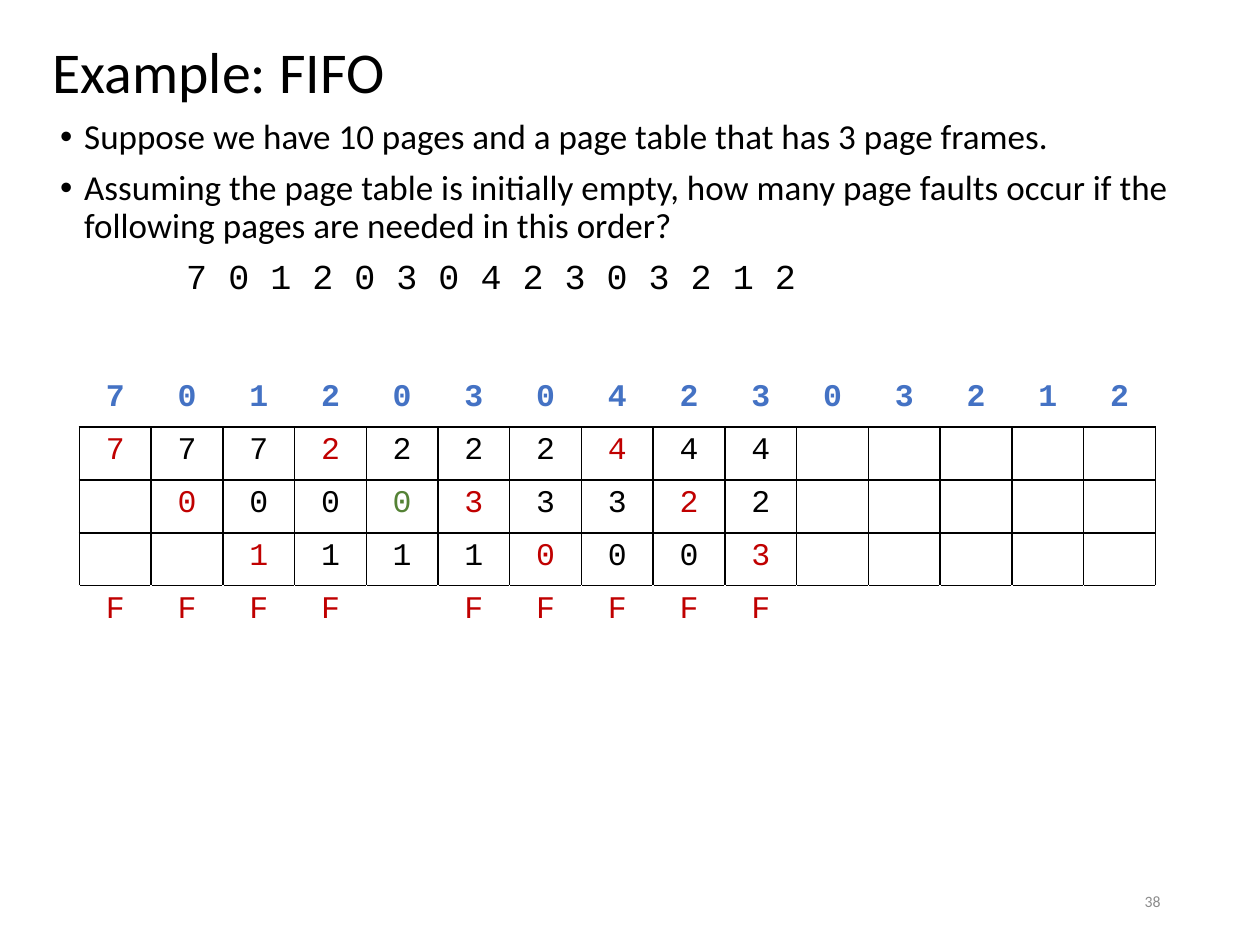
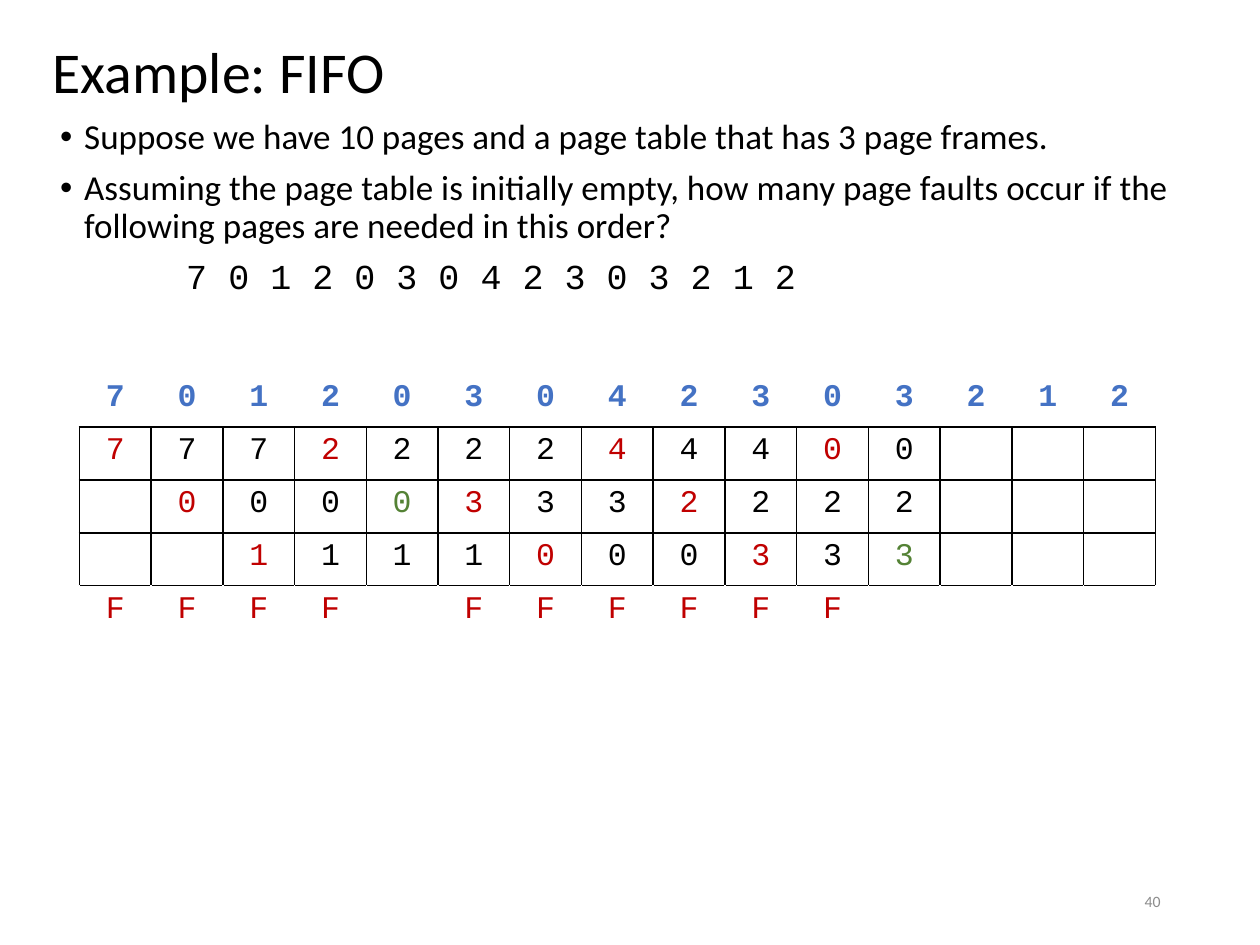
from lxml import etree
from pptx import Presentation
from pptx import util as u
from pptx.dml.color import RGBColor
from pptx.enum import text as t
from pptx.oxml import ns

BLACK = RGBColor(0x00, 0x00, 0x00)
GRAY = RGBColor(0x8C, 0x8C, 0x8C)
BLUE = RGBColor(0x44, 0x72, 0xC4)
RED = RGBColor(0xC0, 0x00, 0x00)
GREEN = RGBColor(0x54, 0x82, 0x35)
BODY_FONT = "Calibri"
CODE_FONT = "Courier New"

PAGES = "7 0 1 2 0 3 0 4 2 3 0 3 2 1 2"
REQUESTS = PAGES.split()
FRAME_COUNT = 3
LAST_ROW = FRAME_COUNT + 1
BULLETS = [
    "Suppose we have 10 pages and a page table that has 3 page frames.",
    "Assuming the page table is initially empty, how many page faults occur "
    "if the following pages are needed in this order?",
]
# Slide number and how many requests have been served so far
STEPS = [(38, 10), (40, 12)]


def add_text(slide, box, lines, size, color, anchor=t.MSO_ANCHOR.MIDDLE):
    text_box = slide.shapes.add_textbox(*[u.Inches(value) for value in box])
    frame = text_box.text_frame
    frame.word_wrap = True
    frame.vertical_anchor = anchor
    frame.text = "\n".join(lines)
    for paragraph in frame.paragraphs:
        paragraph.line_spacing = 0.9
        font = paragraph.runs[0].font
        font.name, font.size, font.color.rgb = BODY_FONT, u.Pt(size), color
    return frame.paragraphs


def write_cell(cell, value, color, bold=False):
    cell.text_frame.text = value
    paragraph = cell.text_frame.paragraphs[0]
    paragraph.alignment = t.PP_ALIGN.CENTER
    font = paragraph.runs[0].font
    font.name, font.size, font.bold = CODE_FONT, u.Pt(18), bold
    font.color.rgb = color


presentation = Presentation()
presentation.slide_width = u.Inches(10)
presentation.slide_height = u.Inches(7.5)

for slide_number, served in STEPS:
    slide = presentation.slides.add_slide(presentation.slide_layouts[6])

    # Question with bullets and the page sequence
    question = add_text(slide, (0.38, 0.9, 9.3, 6.5), BULLETS + [PAGES],
                        20, BLACK, t.MSO_ANCHOR.TOP)
    for paragraph in question:
        paragraph.space_before = u.Pt(7.5)
        properties = paragraph._p.get_or_add_pPr()
        if paragraph.text == PAGES:
            properties.set("marL", str(u.Inches(1)))
            paragraph.runs[0].font.name = CODE_FONT
        else:
            properties.set("marL", str(u.Inches(0.19)))
            properties.set("indent", str(u.Inches(-0.19)))
            etree.SubElement(properties, ns.qn("a:buFont"), typeface="Arial")
            etree.SubElement(properties, ns.qn("a:buChar"), char="•")

    # Title and slide number
    add_text(slide, (0.32, 0.1, 9.35, 0.99), ["Example: FIFO"], 33, BLACK)
    footer = add_text(slide, (7.06, 6.95, 2.25, 0.4), [str(slide_number)], 9, GRAY)
    footer[0].alignment = t.PP_ALIGN.RIGHT
    footer[0].line_spacing = 1.0

    # Table: requests on top, frames in the grid, faults below
    table = slide.shapes.add_table(
        LAST_ROW + 1, len(REQUESTS), u.Inches(0.63), u.Inches(2.97),
        u.Inches(8.54), u.Inches(2.1)).table
    table.first_row = False
    table.horz_banding = False
    for row_index in range(LAST_ROW + 1):
        if row_index == 0:
            edges = ["a:lnB"]
        elif row_index == LAST_ROW:
            edges = ["a:lnT"]
        else:
            edges = ["a:lnL", "a:lnR", "a:lnT", "a:lnB"]
        for cell in table.rows[row_index].cells:
            cell_properties = cell._tc.get_or_add_tcPr()
            for edge in edges:
                line = etree.SubElement(cell_properties, ns.qn(edge), w=str(u.Pt(1)))
                fill = etree.SubElement(line, ns.qn("a:solidFill"))
                etree.SubElement(fill, ns.qn("a:srgbClr"), val=str(BLACK))
            cell.fill.background()

    # First in, first out: each fault replaces the oldest page
    frames = [""] * FRAME_COUNT
    oldest = 0
    for column, page in enumerate(REQUESTS):
        write_cell(table.cell(0, column), page, BLUE, bold=True)
        if column >= served:
            continue
        fault = page not in frames
        if fault:
            frames[oldest] = page
            oldest = (oldest + 1) % FRAME_COUNT
            write_cell(table.cell(LAST_ROW, column), "F", RED)
        for row, held_page in enumerate(frames, start=1):
            if held_page == page:
                write_cell(table.cell(row, column), held_page, RED if fault else GREEN)
            elif held_page:
                write_cell(table.cell(row, column), held_page, BLACK)

presentation.save("out.pptx")
